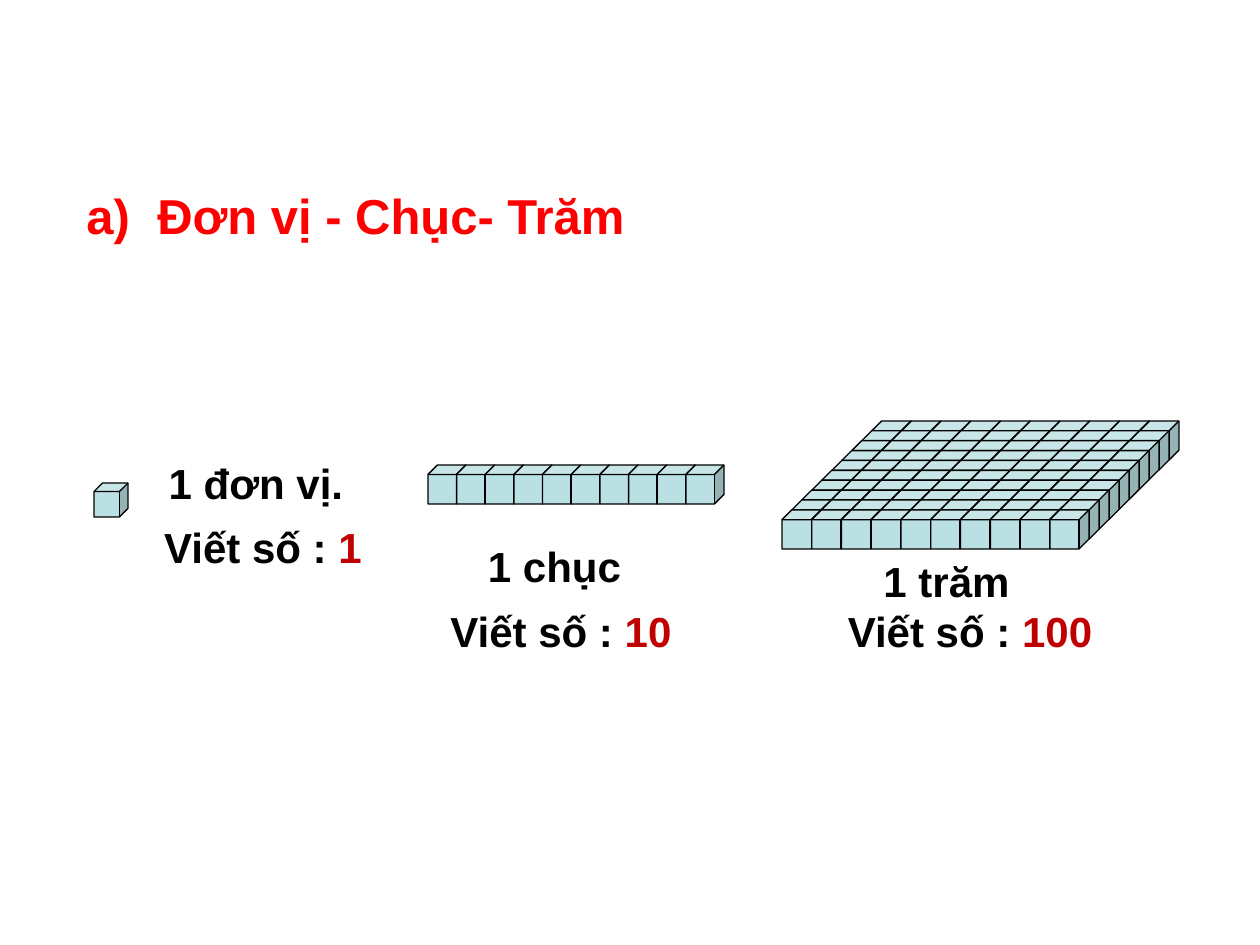
"""Build a slide on units, tens and hundreds shown with counting cubes."""
import pptx
import pptx.dml.color
import pptx.enum.shapes
import pptx.enum.text
import pptx.oxml.ns
import pptx.util
from lxml import etree

PX = 914400 // 126
THEME = {
    "font": "Arial",
    "heading_size": 28,
    "label_size": 24,
    "heading": "FF0000",
    "text": "000000",
    "number": "C00000",
    "cube": "BBE0E3",
    "edge": "000000",
    "edge_width": 0.75,
}
CENTER = pptx.enum.text.PP_ALIGN.CENTER
JUSTIFY = pptx.enum.text.PP_ALIGN.JUSTIFY

HEADING = ("Đơn vị - Chục- Trăm", (74, 179, 708, 72))
HEADING_INDENT = 71
UNIT_CUBE = (94, 483, 34, 34)
BLOCKS = [
    {"label": "1 chục", "label_box": (470, 534, 169, 64), "rows": 1, "columns": 10,
     "cube": (38, 39), "back_left": 428, "front_left": 428,
     "back_top": 465, "front_top": 465, "row_span": 258},
    {"label": "1 trăm", "label_box": (862, 549, 169, 64), "rows": 10, "columns": 10,
     "cube": (39, 39), "back_left": 872, "front_left": 782,
     "back_top": 421, "front_top": 510, "row_span": 268},
]
UNIT_LABEL = ("1 đơn vị.", (155, 451, 202, 64))
WRITTEN_PREFIX = "Viết số : "
WRITTEN_NUMBERS = [
    ("1", (151, 515, 224, 64)),
    ("10", (437, 599, 248, 63)),
    ("100", (834, 599, 272, 64)),
]


def emu(box):
    return [round(length * PX) for length in box]


def color(name):
    return pptx.dml.color.RGBColor.from_string(THEME[name])


def add_text(shapes, pieces, box, size="label_size", align=CENTER, wrap=False):
    frame = shapes.add_textbox(*emu(box)).text_frame
    frame.word_wrap = wrap
    frame.auto_size = pptx.enum.text.MSO_AUTO_SIZE.SHAPE_TO_FIT_TEXT
    paragraph = frame.paragraphs[0]
    paragraph.alignment = align
    for words, ink in pieces:
        run = paragraph.add_run()
        run.text = words
        run.font.name = THEME["font"]
        run.font.size = pptx.util.Pt(THEME[size])
        run.font.bold = True
        run.font.color.rgb = color(ink)
    return paragraph


def add_heading(shapes):
    words, box = HEADING
    heading = add_text(shapes, [(words, "heading")], box, "heading_size", JUSTIFY, True)
    properties = heading._p.get_or_add_pPr()
    properties.set("marL", str(HEADING_INDENT * PX))
    properties.set("indent", str(-HEADING_INDENT * PX))
    numbering = etree.SubElement(properties, pptx.oxml.ns.qn("a:buAutoNum"))
    numbering.set("type", "alphaLcParenR")


def add_cube(shapes, box):
    cube = shapes.add_shape(pptx.enum.shapes.MSO_SHAPE.CUBE, *emu(box))
    cube.shadow.inherit = False
    cube.fill.solid()
    cube.fill.fore_color.rgb = color("cube")
    cube.line.color.rgb = color("edge")
    cube.line.width = pptx.util.Pt(THEME["edge_width"])


def add_block(shapes, block):
    group = shapes.add_group_shape().shapes
    add_text(group, [(block["label"], "text")], block["label_box"], wrap=True)
    for row in range(block["rows"]):
        depth = row / max(block["rows"] - 1, 1)
        left = block["back_left"] + depth * (block["front_left"] - block["back_left"])
        top = block["back_top"] + depth * (block["front_top"] - block["back_top"])
        for column in range(block["columns"]):
            offset = block["row_span"] * column / (block["columns"] - 1)
            add_cube(group, (left + offset, top, *block["cube"]))


def main():
    deck = pptx.Presentation()
    deck.slide_width, deck.slide_height = emu((1260, 945))
    shapes = deck.slides.add_slide(deck.slide_layouts[6]).shapes
    add_heading(shapes)
    add_cube(shapes, UNIT_CUBE)
    for block in BLOCKS:
        add_block(shapes, block)
    unit_words, unit_box = UNIT_LABEL
    add_text(shapes, [(unit_words, "text")], unit_box)
    for number, box in WRITTEN_NUMBERS:
        add_text(shapes, [(WRITTEN_PREFIX, "text"), (number, "number")], box)
    deck.save("out.pptx")


if __name__ == "__main__":
    main()
